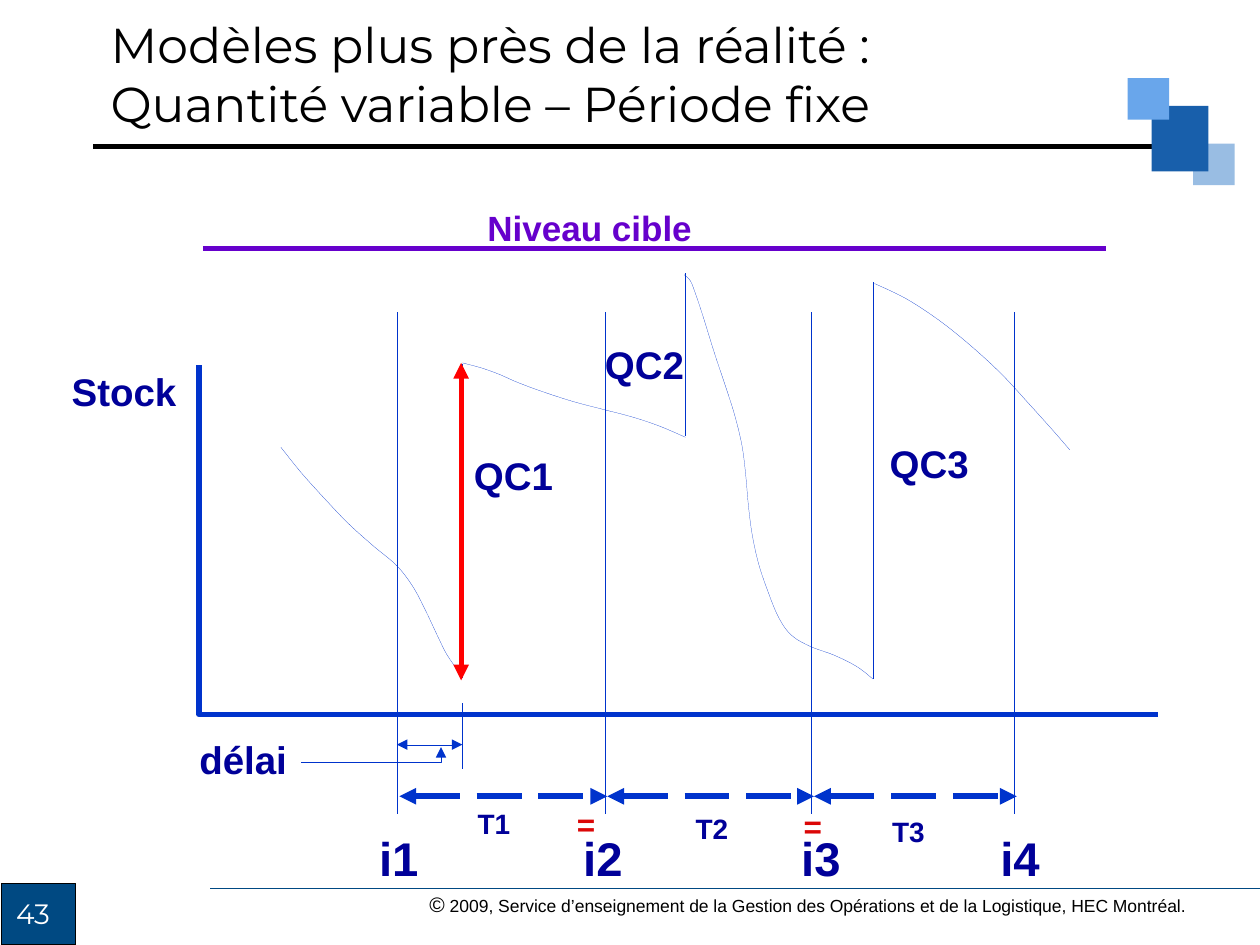
import pptx
import pptx.util
import pptx.dml.color
import pptx.enum.dml
import pptx.enum.shapes
import pptx.enum.text
import lxml.etree
import pptx.oxml.ns

COLORS = {
    "black": "000000", "white": "FFFFFF", "page": "004982",
    "pale": "99BDE3", "deep": "185FAB", "sky": "69A6EB",
    "blue": "0033CC", "navy": "000099", "goal": "6600CC",
    "red": "FF0000", "equal": "DB0707",
}
ANCHOR = pptx.enum.text.MSO_ANCHOR
ALIGN = pptx.enum.text.PP_ALIGN
DASH = pptx.enum.dml.MSO_LINE.LONG_DASH
THIN = 0.1

FALL = [(2.23, 3.55), (2.39, 3.75), (2.57, 3.95), (2.76, 4.15), (2.96, 4.33),
        (3.15, 4.49), (3.28, 4.66), (3.38, 4.85), (3.47, 5.04), (3.55, 5.2),
        (3.67, 5.37)]
SLOPE = [(3.67, 2.88), (3.82, 2.92), (3.96, 2.97), (4.12, 3.04), (4.34, 3.12),
         (4.56, 3.19), (4.79, 3.25), (5.02, 3.31), (5.23, 3.38), (5.44, 3.47)]
DROP = [(5.43, 2.18), (5.48, 2.23), (5.52, 2.33), (5.58, 2.51), (5.67, 2.8),
        (5.75, 3.04), (5.83, 3.29), (5.89, 3.54), (5.92, 3.78), (5.94, 4.01),
        (5.97, 4.24), (6.02, 4.47), (6.09, 4.68), (6.18, 4.9), (6.28, 5.04),
        (6.43, 5.13), (6.62, 5.2), (6.8, 5.29), (6.93, 5.39)]
LAST = [(6.94, 2.25), (7.19, 2.37), (7.45, 2.54), (7.7, 2.74), (7.95, 2.97),
        (8.18, 3.22), (8.36, 3.42), (8.49, 3.57)]


def inch(num):
    return pptx.util.Cm(num * 2.54)


def rgb(name):
    return pptx.dml.color.RGBColor.from_string(COLORS[name])


def stroke(line, color, width, heads="", dash=None):
    line.color.rgb = rgb(color)
    line.width = pptx.util.Pt(width)
    if dash:
        line.dash_style = dash
    for end in heads.split():
        tag = pptx.oxml.ns.qn(f"a:{end}End")
        lxml.etree.SubElement(line._get_or_add_ln(), tag, type="triangle")


def add_line(slide, start, end, color="blue", width=THIN, heads="", dash=None):
    link = slide.shapes.add_connector(
        pptx.enum.shapes.MSO_CONNECTOR.STRAIGHT,
        *[inch(num) for num in (*start, *end)])
    stroke(link.line, color, width, heads, dash)
    lxml.etree.SubElement(link._element.spPr, pptx.oxml.ns.qn("a:effectLst"))


def add_route(slide, points, width=THIN, heads=""):
    spots = [(inch(x), inch(y)) for x, y in points]
    pen = slide.shapes.build_freeform(*spots[0])
    pen.add_line_segments(spots[1:], close=False)
    shape = pen.convert_to_shape()
    shape.shadow.inherit = False
    shape.fill.background()
    stroke(shape.line, "blue", width, heads)


def blend(a, b, c, d, t):
    return (2 * b + (c - a) * t + (2 * a - 5 * b + 4 * c - d) * t ** 2
            + (3 * b - a - 3 * c + d) * t ** 3) / 2


def add_curve(slide, knots, steps=5):
    ends = [knots[0], *knots, knots[-1]]
    points = [tuple(blend(*axis, step / steps) for axis in zip(*ends[i:i + 4]))
              for i in range(len(knots) - 1) for step in range(steps)]
    add_route(slide, points + [knots[-1]])


def add_box(slide, left, top, width, height, color, edge=None):
    box = slide.shapes.add_shape(
        pptx.enum.shapes.MSO_SHAPE.RECTANGLE,
        *[inch(num) for num in (left, top, width, height)])
    box.shadow.inherit = False
    box.fill.solid()
    box.fill.fore_color.rgb = rgb(color)
    if edge:
        stroke(box.line, edge, 0.75)
    else:
        box.line.fill.background()


def add_text(slide, text, place, size, color, font="Arial", bold=False,
             anchor=ANCHOR.TOP, align=ALIGN.LEFT, wrap=False):
    box = slide.shapes.add_textbox(*[inch(num) for num in place])
    frame = box.text_frame
    frame.word_wrap = wrap
    frame.vertical_anchor = anchor
    para = frame.paragraphs[0]
    para.text = text
    para.alignment = align
    para.font.name = font
    para.font.size = pptx.util.Pt(size)
    para.font.bold = bold
    para.font.color.rgb = rgb(color)
    return para


def add_label(slide, text, place, size):
    add_text(slide, text, place, size, "navy", bold=True,
             anchor=ANCHOR.BOTTOM, align=ALIGN.CENTER)


def draw_frame(slide):
    add_box(slide, 0.01, 7.01, 0.59, 0.49, "page", "black")
    add_text(slide, "43", (0.03, 7.07, 0.5, 0.4), 16, "white", "Montserrat")
    add_line(slide, (1.67, 7.05), (10, 7.05), "page", 0.75)
    note = add_text(slide, "©", (3.31, 7.03, 6.42, 0.3), 12, "black")
    run = note.add_run()
    run.text = (" 2009, Service d’enseignement de la Gestion des Opérations"
                " et de la Logistique, HEC Montréal.")
    run.font.size = pptx.util.Pt(10)
    add_line(slide, (0.74, 1.16), (9.41, 1.16), "black", 2.75)
    add_box(slide, 9.47, 1.14, 0.33, 0.33, "pale")
    add_box(slide, 9.14, 0.84, 0.45, 0.52, "deep")
    add_box(slide, 8.95, 0.62, 0.33, 0.33, "sky")
    add_text(slide, "Modèles plus près de la réalité :\v"
             "Quantité variable – Période fixe", (0.78, 0, 9.22, 1.16),
             28, "black", "Montserrat", anchor=ANCHOR.MIDDLE, wrap=True)


def draw_axes(slide):
    add_route(slide, [(1.58, 2.9), (1.58, 5.67), (9.19, 5.67)], 3.2)
    add_label(slide, "Stock", (0.47, 2.87, 1.03, 0.47), 22)
    marks = [3.15, 4.8, 6.44, 8.05]
    for num, (x, left) in enumerate(zip(marks, [2.91, 4.53, 6.26, 7.84]), 1):
        add_line(slide, (x, 2.48), (x, 6.46))
        add_label(slide, f"i{num}", (left, 6.53, 0.51, 0.55), 27)
    spots = [(3.69, 6.35), (5.42, 6.39), (6.98, 6.41)]
    for num, (x, end, spot) in enumerate(zip(marks, marks[1:], spots), 1):
        add_line(slide, (x + 0.02, 6.32), (end + 0.02, 6.32), "blue", 3.2,
                 "head tail", DASH)
        add_label(slide, f"T{num}", (*spot, 0.46, 0.37), 16)
    for left, top in [(4.48, 6.34), (6.28, 6.36)]:
        add_text(slide, "=", (left, top, 0.68, 0.4), 18, "equal", bold=True)


def draw_stock(slide):
    for knots in (FALL, SLOPE, DROP, LAST):
        add_curve(slide, knots)
    for x, top, low in [(3.67, 2.89, 5.38), (3.67, 5.58, 6.1),
                        (5.44, 2.17, 3.46), (6.93, 2.24, 5.39)]:
        add_line(slide, (x, top), (x, low))
    for num, spot in enumerate([(3.66, 3.53), (4.7, 2.65), (6.96, 3.44)], 1):
        add_label(slide, f"QC{num}", (*spot, 0.83, 0.47), 22)
    add_line(slide, (3.66, 2.88), (3.66, 5.4), "red", 3, "head tail")


def draw_notes(slide):
    add_line(slide, (3.15, 5.91), (3.67, 5.91), heads="head tail")
    add_label(slide, "délai", (1.48, 5.79, 0.9, 0.47), 22)
    add_route(slide, [(2.39, 6.05), (3.5, 6.05), (3.5, 5.93)], heads="tail")
    add_line(slide, (1.61, 1.97), (8.78, 1.97), "goal", 3)
    add_text(slide, "Niveau cible", (3.77, 1.59, 2, 0.43), 20, "goal",
             bold=True, wrap=True)


def main():
    deck = pptx.Presentation()
    deck.slide_width = inch(10)
    deck.slide_height = inch(7.5)
    slide = deck.slides.add_slide(deck.slide_layouts[6])
    draw_frame(slide)
    draw_axes(slide)
    draw_stock(slide)
    draw_notes(slide)
    deck.save("out.pptx")


if __name__ == "__main__":
    main()
